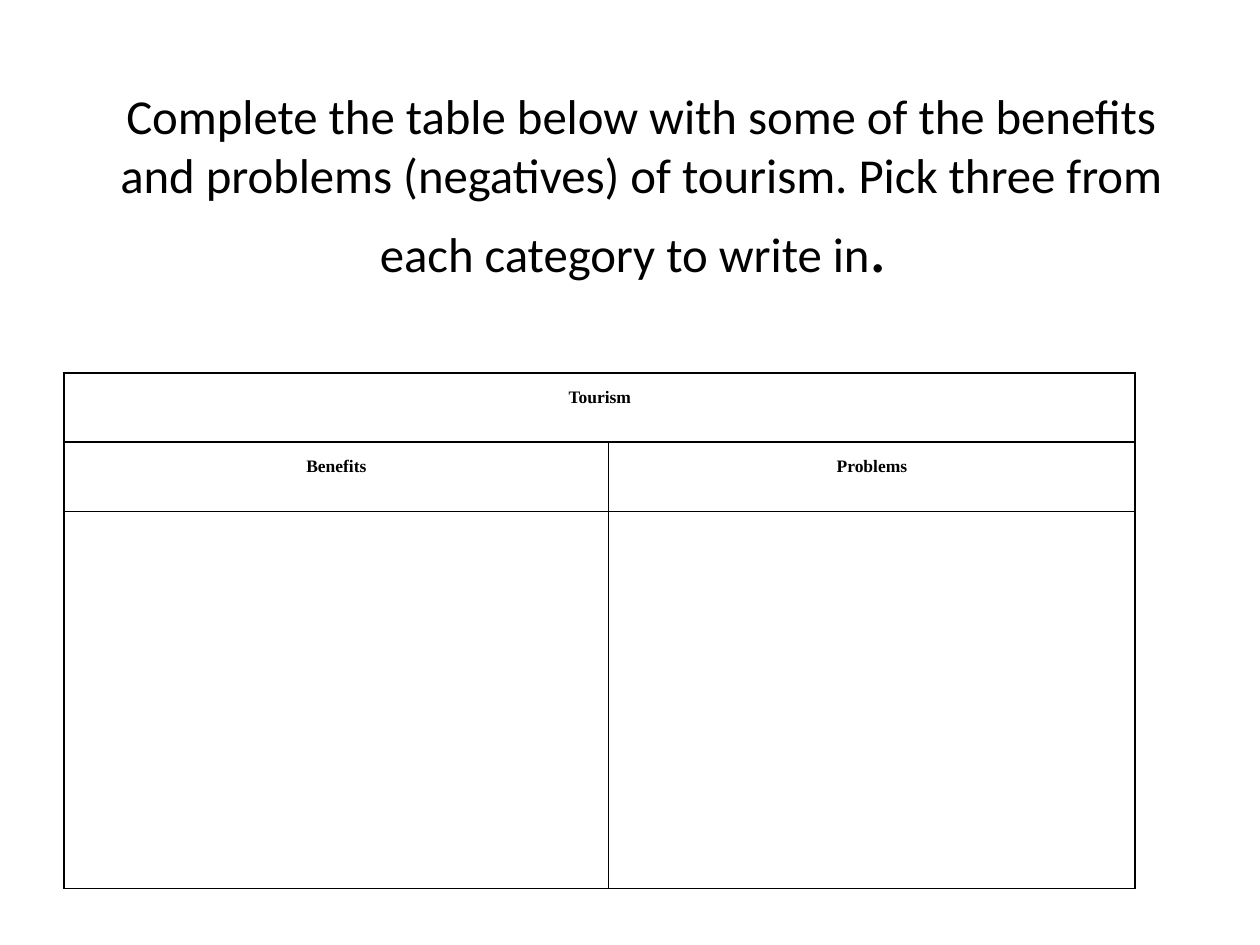
from lxml.etree import SubElement
from pptx import Presentation
from pptx.dml.color import RGBColor
from pptx.enum.text import MSO_ANCHOR, PP_ALIGN
from pptx.oxml.ns import qn
from pptx.util import Inches, Pt

BLACK = RGBColor(0, 0, 0)
WHITE = RGBColor(255, 255, 255)

TITLE_RUNS = [
    ("Complete the table below with some of the benefits and problems "
     "(negatives) of tourism. Pick three from each category to write in", 27.9),
    (". ", 39.6),
]
COL_WIDTHS = [4.32, 4.18]
ROW_HEIGHTS = [0.55, 0.55, 2.99]
HEADINGS = {(0, 0): "Tourism", (1, 0): "Benefits", (1, 1): "Problems"}


def set_attrs(obj, formats):
    for name, value in formats.items():
        setattr(obj, name, value)


def add_run(p, text, name, size, bold=False):
    r = p.add_run()
    r.text = text
    set_attrs(r.font, {"name": name, "size": Pt(size), "bold": bold})
    r.font.color.rgb = BLACK


def add_title(s, left, top, width, height):
    sp = s.shapes.add_textbox(*map(Inches, (left, top, width, height)))
    tf = sp.text_frame
    # The deep bottom margin lifts the centred text
    set_attrs(tf, {"word_wrap": True, "vertical_anchor": MSO_ANCHOR.MIDDLE,
                   "margin_bottom": Inches(0.65)})
    p = tf.paragraphs[0]
    p.alignment = PP_ALIGN.CENTER
    for text, size in TITLE_RUNS:
        add_run(p, text, "Calibri", size)


def style_cell(cell):
    set_attrs(cell, {"margin_left": Inches(0.07), "margin_right": Inches(0.07),
                     "margin_top": Inches(0.12), "margin_bottom": 0})
    tcPr = cell._tc.get_or_add_tcPr()
    for side in ("a:lnL", "a:lnR", "a:lnT", "a:lnB"):
        ln = SubElement(tcPr, qn(side), w=str(Pt(1)))
        fill = SubElement(ln, qn("a:solidFill"))
        SubElement(fill, qn("a:srgbClr"), val=str(BLACK))
    cell.fill.solid()
    cell.fill.fore_color.rgb = WHITE


def add_grid(s, left, top):
    size = (sum(COL_WIDTHS), sum(ROW_HEIGHTS))
    table = s.shapes.add_table(len(ROW_HEIGHTS), len(COL_WIDTHS),
                               *map(Inches, (left, top, *size))).table
    set_attrs(table, {"first_row": False, "horz_banding": False})
    for col, width in zip(table.columns, COL_WIDTHS):
        col.width = Inches(width)
    for row, height in zip(table.rows, ROW_HEIGHTS):
        row.height = Inches(height)
        for cell in row.cells:
            style_cell(cell)
    table.cell(0, 0).merge(table.cell(0, 1))
    for (row, col), text in HEADINGS.items():
        p = table.cell(row, col).text_frame.paragraphs[0]
        p.alignment = PP_ALIGN.CENTER
        add_run(p, text, "Times New Roman", 10, bold=True)


def main():
    prs = Presentation()
    set_attrs(prs, {"slide_width": Inches(10), "slide_height": Inches(7.5)})
    s = prs.slides.add_slide(prs.slide_layouts[6])
    # Instruction
    add_title(s, 0.59, 1.15, 9, 1.25)
    # Table to fill in
    add_grid(s, 0.51, 2.96)
    prs.save("out.pptx")


if __name__ == "__main__":
    main()
